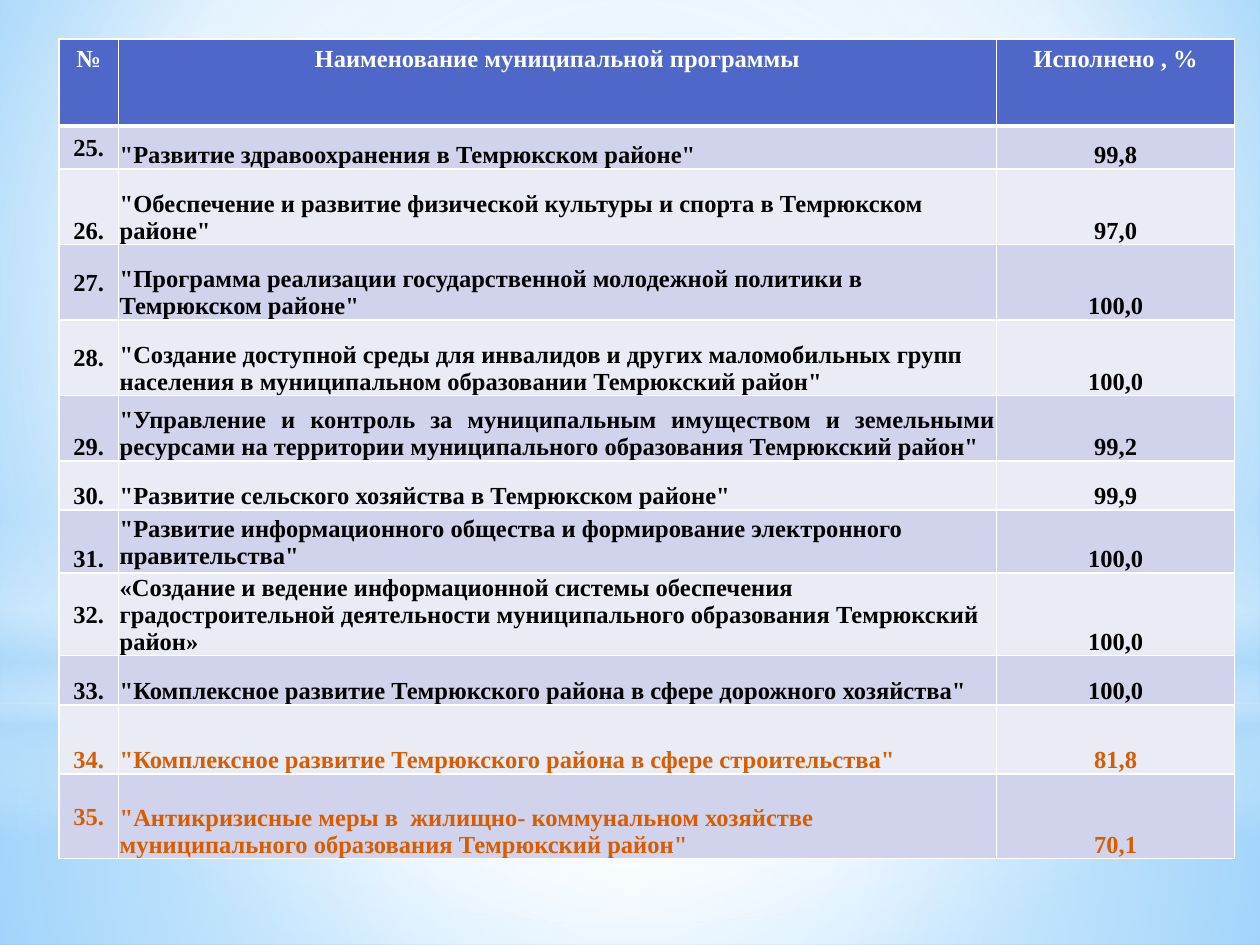
"""Builds a slide with a table of municipal programmes and their execution rates."""
from dataclasses import dataclass

from lxml.etree import SubElement
from pptx import Presentation
from pptx.dml.color import RGBColor
from pptx.enum.shapes import MSO_SHAPE as Shape
from pptx.enum.text import MSO_ANCHOR as Anchor, PP_ALIGN as Align
from pptx.oxml.ns import qn
from pptx.util import Inches, Pt

HEADINGS = ("№", "Наименование муниципальной программы", "Исполнено , %")
PROGRAMMES = [
    ("25.", '"Развитие здравоохранения в Темрюкском районе"', "99,8"),
    ("26.", '"Обеспечение и развитие физической культуры и спорта в Темрюкском районе"', "97,0"),
    ("27.", '"Программа реализации государственной молодежной политики в Темрюкском районе"', "100,0"),
    ("28.", '"Создание доступной среды для инвалидов и других маломобильных групп населения '
            'в муниципальном образовании Темрюкский район"', "100,0"),
    ("29.", '"Управление и контроль за муниципальным имуществом и земельными ресурсами '
            'на территории муниципального образования Темрюкский район"', "99,2"),
    ("30.", '"Развитие сельского хозяйства в Темрюкском районе"', "99,9"),
    ("31.", '"Развитие информационного общества и формирование электронного правительства"', "100,0"),
    ("32.", "«Создание и ведение информационной системы обеспечения градостроительной "
            "деятельности муниципального образования Темрюкский район»", "100,0"),
    ("33.", '"Комплексное развитие Темрюкского района в сфере дорожного хозяйства"', "100,0"),
    ("34.", '"Комплексное развитие Темрюкского района в сфере строительства"', "81,8"),
    ("35.", '"Антикризисные меры в  жилищно- коммунальном хозяйстве муниципального '
            'образования Темрюкский район"', "70,1"),
]
LOW_RESULTS = {"34.", "35."}
JUSTIFIED_NAMES = {"25.", "29."}
MIDDLE_CELLS = {"25.", "27.", "28.", "32.", "35.", PROGRAMMES[6][1]}

WIDTH, HEIGHT = 10, 7.5
TABLE_LEFT, TABLE_TOP = 0.47, 0.31
COLUMNS = (0.47, 6.97, 1.89)
ROWS = (0.69, 0.34, 0.6, 0.6, 0.6, 0.52, 0.39, 0.5, 0.59, 0.39, 0.55, 0.67)
INSETS = {"margin_left": 0.01, "margin_top": 0.01, "margin_right": 0.01, "margin_bottom": 0}


@dataclass(frozen=True)
class Theme:
    font: str = "Times New Roman"
    size: int = 14
    white: str = "FFFFFF"
    text: str = "000000"
    accent: str = "D85C00"
    header: str = "4E67C8"
    bands: tuple = ("D0D3EB", "E9EBF5")
    haze: str = "B4DCFA"
    sky: str = "9ED5FF"
    deep_sky: str = "5BB9FF"
    border: int = 1
    header_border: int = 3


THEME = Theme()
CENTRE = (50, 50, 50, 50)
SKY = [(0, THEME.sky, 100), (60, THEME.white, 100), (100, THEME.deep_sky, 100)]
SKY_FOCUS = (20, 10, 20, 60)
GLOWS = [
    (Shape.RECTANGLE, 0.744, 0.256, CENTRE,
     [(0, THEME.white, 91), (37, THEME.white, 76), (100, THEME.haze, 79)]),
    (Shape.RECTANGLE, 0, 0.744, CENTRE,
     [(0, THEME.white, 89), (48, THEME.white, 62), (100, THEME.haze, 79)]),
    (Shape.RECTANGLE, 0.55, 0.333, None,
     [(0, THEME.white, 0), (29, THEME.white, 30), (45, THEME.haze, 40),
      (55, THEME.white, 26), (65, THEME.haze, 60), (100, THEME.white, 0)]),
    (Shape.OVAL, 0.233, 0.744, CENTRE, [(0, THEME.white, 100), (56, THEME.white, 0)]),
]


def paint_gradient(fill, properties, stops, focus):
    fill.gradient()
    gradient = properties.find(qn("a:gradFill"))
    for child in list(gradient):
        gradient.remove(child)
    stop_list = SubElement(gradient, qn("a:gsLst"))
    for position, color, opacity in stops:
        stop = SubElement(stop_list, qn("a:gs"), pos=str(position * 1000))
        tint = SubElement(stop, qn("a:srgbClr"), val=color)
        if opacity < 100:
            SubElement(tint, qn("a:alpha"), val=str(opacity * 1000))
    if focus:
        route = SubElement(gradient, qn("a:path"), path="circle")
        sides = {side: str(share * 1000) for side, share in zip("ltrb", focus)}
        SubElement(route, qn("a:fillToRect"), **sides)
    else:
        SubElement(gradient, qn("a:lin"), ang="5400000", scaled="0")


def add_backdrop(page):
    fill = page.background.fill
    fill.gradient()
    paint_gradient(fill, page._element.cSld.find(qn("p:bg")).find(qn("p:bgPr")), SKY, SKY_FOCUS)
    for kind, top, height, focus, stops in GLOWS:
        glow = page.shapes.add_shape(
            kind, 0, Inches(top * HEIGHT), Inches(WIDTH), Inches(height * HEIGHT))
        glow.shadow.inherit = False
        glow.line.fill.background()
        paint_gradient(glow.fill, glow._element.spPr, stops, focus)


def style_cell(cell, fill, widths):
    properties = cell._tc.get_or_add_tcPr()
    for side, width in zip("LRTB", widths):
        line = SubElement(properties, qn(f"a:ln{side}"), w=str(Pt(width)))
        paint = SubElement(line, qn("a:solidFill"))
        SubElement(paint, qn("a:srgbClr"), val=THEME.white)
    cell.fill.solid()
    cell.fill.fore_color.rgb = RGBColor.from_string(fill)


def write_cell(cell, text, color, align):
    para = cell.text_frame.paragraphs[0]
    para.alignment = align
    span = para.add_run()
    span.text = text
    span.font.name = THEME.font
    span.font.size = Pt(THEME.size)
    span.font.bold = True
    span.font.color.rgb = RGBColor.from_string(color)


def name_alignment(number):
    return Align.JUSTIFY if number in JUSTIFIED_NAMES else Align.LEFT


def add_programme_table(page):
    table = page.shapes.add_table(
        len(ROWS), len(COLUMNS), Inches(TABLE_LEFT), Inches(TABLE_TOP),
        Inches(sum(COLUMNS)), Inches(sum(ROWS))).table
    for column, width in zip(table.columns, COLUMNS):
        column.width = Inches(width)
    for row, height in zip(table.rows, ROWS):
        row.height = Inches(height)

    thin, thick = THEME.border, THEME.header_border
    for cell, heading in zip(table.rows[0].cells, HEADINGS):
        style_cell(cell, THEME.header, (thin, thin, thin, thick))
        write_cell(cell, heading, THEME.white, Align.CENTER)

    for index, programme in enumerate(PROGRAMMES):
        number = programme[0]
        color = THEME.accent if number in LOW_RESULTS else THEME.text
        aligns = (Align.CENTER, name_alignment(number), Align.CENTER)
        top = thin if index else thick
        for cell, text, align in zip(table.rows[index + 1].cells, programme, aligns):
            style_cell(cell, THEME.bands[index % 2], (thin, thin, top, thin))
            for margin, size in INSETS.items():
                setattr(cell, margin, Inches(size))
            cell.vertical_anchor = Anchor.MIDDLE if text in MIDDLE_CELLS else Anchor.BOTTOM
            write_cell(cell, text, color, align)


def main():
    deck = Presentation()
    deck.slide_width, deck.slide_height = Inches(WIDTH), Inches(HEIGHT)
    page = deck.slides.add_slide(deck.slide_layouts[6])
    add_backdrop(page)
    add_programme_table(page)
    deck.save("out.pptx")


if __name__ == "__main__":
    main()
